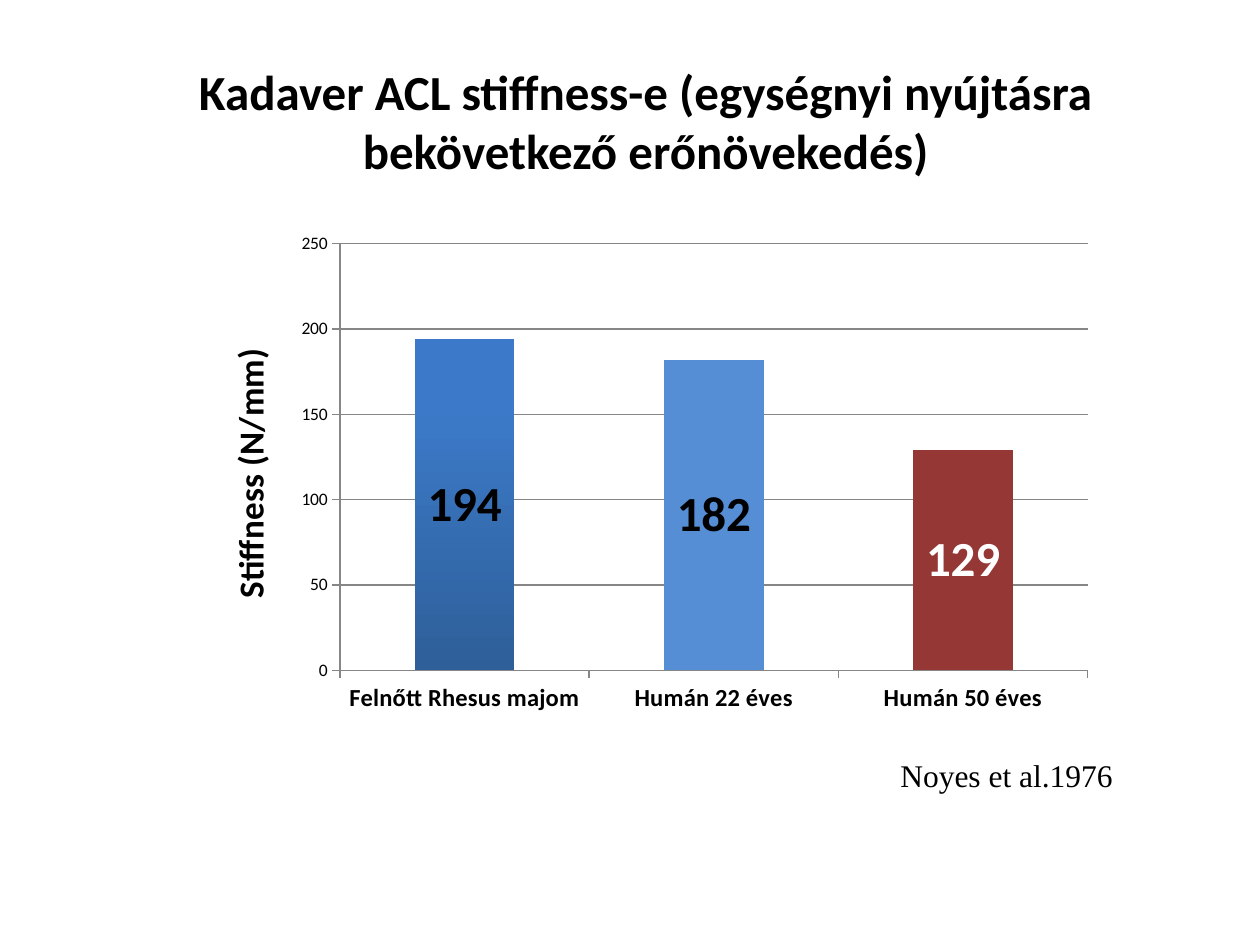
from dataclasses import dataclass

from lxml.etree import SubElement
from pptx import Presentation
from pptx.chart.data import CategoryChartData
from pptx.dml.color import RGBColor
from pptx.enum.chart import XL_CHART_TYPE as ChartType
from pptx.enum.chart import XL_LABEL_POSITION as LabelPosition
from pptx.enum.chart import XL_TICK_MARK as TickMark
from pptx.enum.text import MSO_ANCHOR as Anchor
from pptx.enum.text import PP_ALIGN as Align
from pptx.oxml.ns import qn
from pptx.util import Pt

EMU_PER_PX = 914400 // 126


@dataclass(frozen=True)
class Theme:
    heading_font: str = "Calibri"
    source_font: str = "Times New Roman"
    ink: str = "000000"
    light: str = "FFFFFF"
    axis: str = "868686"
    bar_top: str = "3C7AC9"
    bar_bottom: str = "2E5F99"
    young: str = "558ED5"
    older: str = "953735"
    title_size: int = 28
    axis_title_size: int = 20
    source_size: int = 18
    category_size: int = 14
    tick_size: int = 10


THEME = Theme()


def px(length):
    return length * EMU_PER_PX


def rgb(value):
    return RGBColor.from_string(value)


def style_font(font, size, bold=False, color=THEME.ink, face=THEME.heading_font):
    font.name, font.size, font.bold = face, Pt(size), bold
    font.color.rgb = rgb(color)


def write_text(frame, text, align=Align.LEFT, anchor=Anchor.TOP, **font_format):
    frame.word_wrap = True
    frame.vertical_anchor = anchor
    paragraph = frame.paragraphs[0]
    paragraph.alignment = align
    run = paragraph.add_run()
    run.text = text
    style_font(run.font, **font_format)


def place(shape, left, top, width, height):
    shape.left, shape.top = px(left), px(top)
    shape.width, shape.height = px(width), px(height)


def add_title(slide, text):
    title = slide.shapes.title
    place(title, 95, 55, 1101, 131)
    write_text(title.text_frame, text, align=Align.CENTER, anchor=Anchor.MIDDLE,
               size=THEME.title_size, bold=True)


def add_source(slide, text):
    source = slide.shapes.add_textbox(px(888), px(750), px(242), px(50))
    write_text(source.text_frame, text, size=THEME.source_size, face=THEME.source_font)


def style_line(line):
    line.color.rgb = rgb(THEME.axis)
    line.width = Pt(0.75)


def style_axes(chart):
    categories, values = chart.category_axis, chart.value_axis
    for axis in (categories, values):
        axis.major_tick_mark = TickMark.OUTSIDE
        axis.minor_tick_mark = TickMark.NONE
        style_line(axis.format.line)
    style_font(categories.tick_labels.font, THEME.category_size, bold=True)
    style_font(values.tick_labels.font, THEME.tick_size)
    values.minimum_scale, values.maximum_scale, values.major_unit = 0, 250, 50
    style_line(values.major_gridlines.format.line)
    write_text(values.axis_title.text_frame, "Stiffness (N/mm)",
               align=Align.CENTER, size=THEME.axis_title_size, bold=True)


def style_bars(plot):
    plot.gap_width = 150
    plot.vary_by_categories = False
    bars = plot.series[0]
    bars.invert_if_negative = False
    labels = bars.data_labels
    labels.show_value = True
    labels.position = LabelPosition.CENTER
    style_font(labels.font, THEME.title_size, bold=True)

    monkey = bars.points[0].format.fill
    monkey.gradient()
    monkey.gradient_angle = 270
    for stop, position, color in zip(monkey.gradient_stops, (0.2, 1),
                                     (THEME.bar_top, THEME.bar_bottom)):
        stop.position = position
        stop.color.rgb = rgb(color)
    for index, color in ((1, THEME.young), (2, THEME.older)):
        fill = bars.points[index].format.fill
        fill.solid()
        fill.fore_color.rgb = rgb(color)

    older_label = bars.points[2].data_label
    style_font(older_label.font, THEME.title_size, bold=True, color=THEME.light)
    older_label.position = LabelPosition.CENTER


def fix_plot_area(chart, **fractions):
    plot_area = chart.plots[0]._element.getparent()
    layout = plot_area.find(qn("c:layout"))
    if layout is None:
        layout = SubElement(plot_area, qn("c:layout"))
        plot_area.insert(0, layout)
    manual = SubElement(layout, qn("c:manualLayout"))
    settings = {"layoutTarget": "inner", "xMode": "edge", "yMode": "edge", **fractions}
    for name, value in settings.items():
        SubElement(manual, qn(f"c:{name}")).set("val", str(value))


def add_stiffness_chart(slide):
    stiffness = CategoryChartData()
    stiffness.categories = ["Felnőtt Rhesus majom", "Humán 22 éves", "Humán 50 éves"]
    stiffness.add_series("Series 1", (194, 182, 129))
    chart = slide.shapes.add_chart(ChartType.COLUMN_CLUSTERED, px(194), px(224),
                                   px(912), px(496), stiffness).chart
    chart.has_title = False
    chart.has_legend = False
    style_font(chart.font, THEME.tick_size)
    style_axes(chart)
    style_bars(chart.plots[0])
    fix_plot_area(chart, x=0.16, y=0.04, w=0.82, h=0.86)


def main():
    deck = Presentation()
    deck.slide_width, deck.slide_height = px(1260), px(945)
    slide = deck.slides.add_slide(deck.slide_layouts[5])
    add_title(slide, "Kadaver ACL stiffness-e (egységnyi nyújtásra "
                     "bekövetkező erőnövekedés)")
    add_stiffness_chart(slide)
    add_source(slide, "Noyes et al.1976")
    deck.save("out.pptx")


if __name__ == "__main__":
    main()
